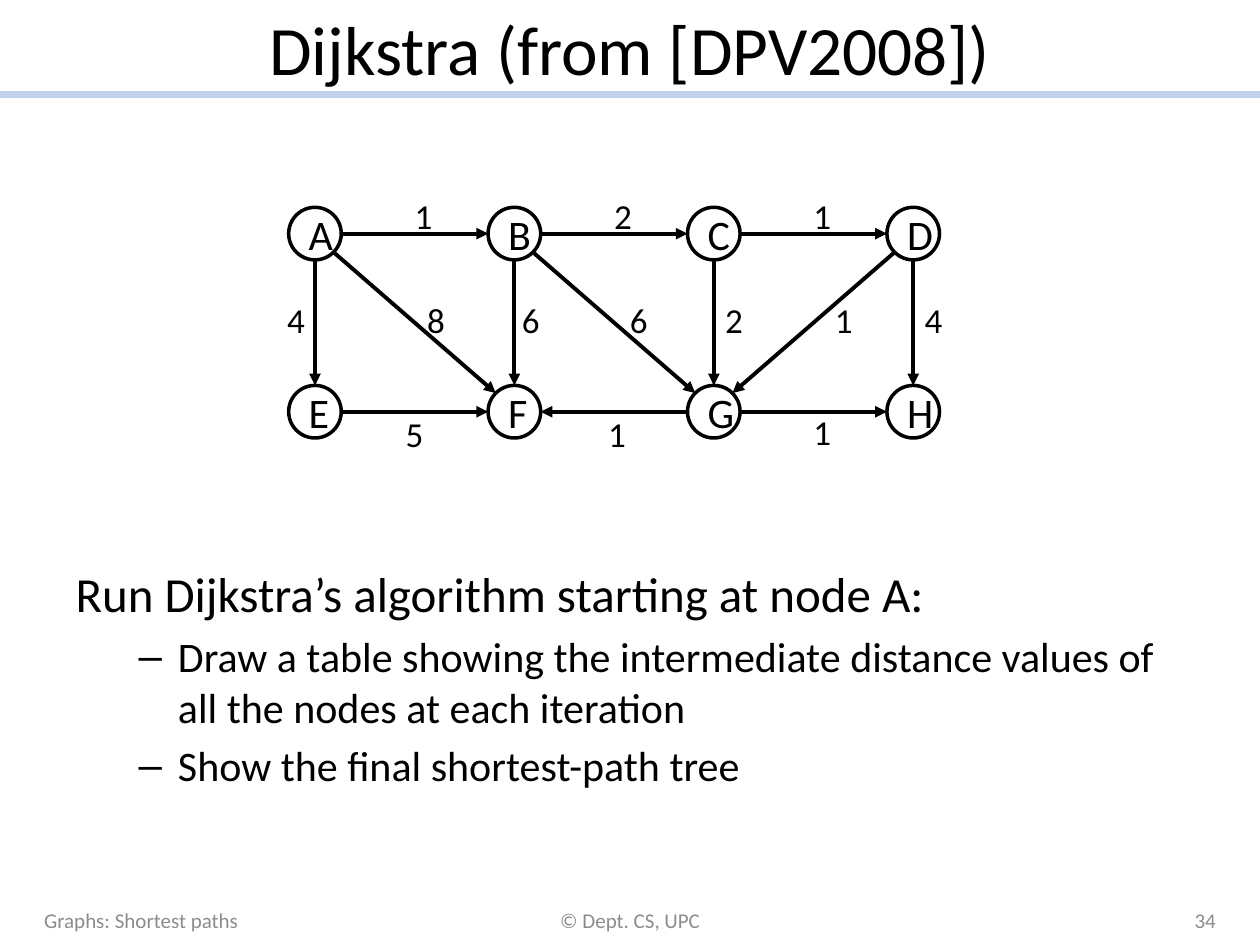
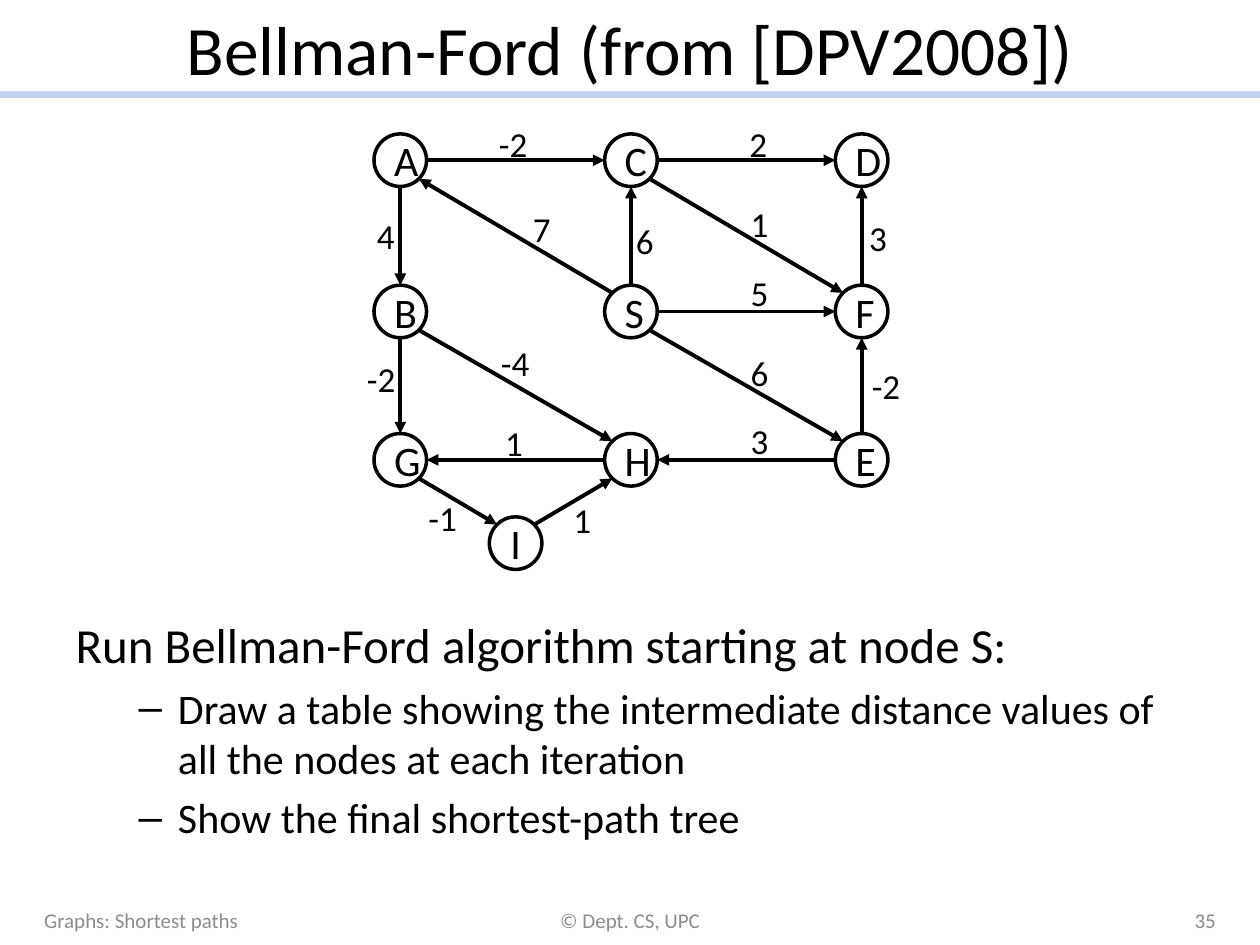
import math

import lxml.etree
import pptx
import pptx.dml.color
import pptx.enum.shapes
import pptx.enum.text
import pptx.oxml.ns
import pptx.util

Cm = pptx.util.Cm
Pt = pptx.util.Pt
ALIGN = pptx.enum.text.PP_ALIGN
MIDDLE = pptx.enum.text.MSO_ANCHOR.MIDDLE

FONT = "Calibri"
BLACK, GREY, BAND = "000000", "8C8C8C", "C2D1ED"
SLIDE_WIDTH, SLIDE_HEIGHT = 25.4, 19.05
TITLE_BOX = (1.27, 0, 22.86, 1.91)
BAND_Y = 1.91
NODE_SIZE = 1.06
LABEL_HEIGHT = 1.12

TASKS = [
    "Draw a table showing the intermediate distance values of all the nodes at each iteration",
    "Show the final shortest-path tree",
]

# Footer boxes: text, left, width, alignment
FOOTER_LEFT = ("Graphs: Shortest paths", 0.64, 5.92, ALIGN.LEFT)
FOOTER_CENTRE = ("© Dept. CS, UPC", 8.68, 8.05, ALIGN.CENTER)
NUMBER_BOX = (18.84, 5.92, ALIGN.RIGHT)

# Nodes: name -> (column, row) in the grid
# Edges: start, end, weight, offset of the weight from the middle of the edge in cm
EXERCISES = [
    {
        "title": "Dijkstra (from [DPV2008])",
        "number": "34",
        "prompt": "Run Dijkstra’s algorithm starting at node A:",
        "body_box": (1.27, 11.23, 22.86, 6.15),
        "left": 6.35,
        "column_gap": 4.02,
        "row_centres": [4.71, 8.3],
        "nodes": {
            "A": (0, 0), "B": (1, 0), "C": (2, 0), "D": (3, 0),
            "E": (0, 1), "F": (1, 1), "G": (2, 1), "H": (3, 1),
        },
        "edges": [
            ("A", "B", "1", (0.18, -0.36)),
            ("B", "C", "2", (0.18, -0.36)),
            ("C", "D", "1", (0.18, -0.36)),
            ("E", "F", "5", (0, 0.46)),
            ("G", "F", "1", (0.06, 0.46)),
            ("G", "H", "1", (0.18, 0.41)),
            ("D", "H", "4", (0.41, -0.06)),
            ("D", "G", "1", (0.61, -0.06)),
            ("B", "G", "6", (0.5, -0.06)),
            ("A", "F", "8", (0.43, -0.06)),
            ("A", "E", "4", (-0.38, -0.06)),
            ("B", "F", "6", (0.33, -0.06)),
            ("C", "G", "2", (0.41, -0.06)),
        ],
    },
    {
        "title": "Bellman-Ford (from [DPV2008])",
        "number": "35",
        "prompt": "Run Bellman-Ford algorithm starting at node S:",
        "body_box": (1.27, 12.27, 22.86, 5.08),
        "left": 8.07,
        "column_gap": 4.65,
        "row_centres": [3.23, 6.28, 9.27, 10.95],
        "nodes": {
            "A": (0, 0), "C": (1, 0), "D": (2, 0),
            "B": (0, 1), "S": (1, 1), "F": (2, 1),
            "G": (0, 2), "H": (1, 2), "E": (2, 2),
            "I": (0.5, 3),
        },
        "edges": [
            ("A", "C", "-2", (-0.04, -0.33)),
            ("C", "D", "2", (0.24, -0.33)),
            ("S", "A", "7", (0.53, -0.13)),
            ("S", "C", "6", (0.28, 0.1)),
            ("C", "F", "1", (0.27, -0.23)),
            ("F", "D", "3", (0.33, 0.05)),
            ("E", "F", "-2", (0.5, 0)),
            ("S", "F", "5", (0.27, -0.38)),
            ("S", "E", "6", (0.27, -0.25)),
            ("B", "G", "-2", (-0.38, -0.13)),
            ("A", "B", "4", (-0.29, 0)),
            ("E", "H", "3", (0.27, -0.38)),
            ("H", "G", "1", (-0.03, -0.33)),
            ("G", "I", "-1", (-0.3, 0.33)),
            ("I", "H", "1", (0.18, 0.38)),
            ("B", "H", "-4", (0, -0.46)),
        ],
    },
]

# Connection site of an ellipse for each direction (right, down)
ELLIPSE_SITES = {
    (0, -1): 0, (-1, -1): 1, (-1, 0): 2, (-1, 1): 3,
    (0, 1): 4, (1, 1): 5, (1, 0): 6, (1, -1): 7,
}


def rgb(colour):
    return pptx.dml.color.RGBColor.from_string(colour)


def add_xml(parent, tag, **attributes):
    return lxml.etree.SubElement(parent, pptx.oxml.ns.qn(tag), attributes)


def add_run(paragraph, text, size, colour=BLACK):
    run = paragraph.add_run()
    run.text = text
    run.font.name = FONT
    run.font.size = Pt(size)
    run.font.color.rgb = rgb(colour)


def place(shape, box):
    shape.left, shape.top, shape.width, shape.height = [Cm(length) for length in box]


def add_line(slide, start, end, colour, width):
    straight = pptx.enum.shapes.MSO_CONNECTOR.STRAIGHT
    line = slide.shapes.add_connector(straight, *[Cm(length) for length in (*start, *end)])
    line.line.color.rgb = rgb(colour)
    line.line.width = Pt(width)
    add_xml(line._element.spPr, "a:effectLst")
    return line


def add_text_box(slide, box, text, size, colour=BLACK, align=ALIGN.LEFT, wrap=True):
    text_box = slide.shapes.add_textbox(*[Cm(length) for length in box])
    frame = text_box.text_frame
    frame.word_wrap = wrap
    paragraph = frame.paragraphs[0]
    paragraph.alignment = align
    add_run(paragraph, text, size, colour)
    return text_box


def add_frame(slide, title, number):
    """Fill in the title, the band below it and the footer."""
    place(slide.shapes.title, TITLE_BOX)
    frame = slide.shapes.title.text_frame
    frame.auto_size = pptx.enum.text.MSO_AUTO_SIZE.NONE
    frame.vertical_anchor = MIDDLE
    frame.paragraphs[0].alignment = ALIGN.CENTER
    add_run(frame.paragraphs[0], title, 39.6)
    add_line(slide, (0, BAND_Y), (SLIDE_WIDTH, BAND_Y), BAND, 4)
    for text, left, width, align in (FOOTER_LEFT, FOOTER_CENTRE, (number, *NUMBER_BOX)):
        footer = add_text_box(slide, (left, 18.03, width, 1.02), text, 12, GREY, align)
        footer.text_frame.vertical_anchor = MIDDLE


def add_assignment(slide, prompt, box):
    body = slide.placeholders[1]
    place(body, box)
    frame = body.text_frame
    frame.auto_size = pptx.enum.text.MSO_AUTO_SIZE.NONE
    heading = frame.paragraphs[0]
    add_run(heading, prompt, 28)
    properties = heading._p.get_or_add_pPr()
    properties.set("marL", "0")
    properties.set("indent", "0")
    add_xml(properties, "a:buNone")
    for task in TASKS:
        paragraph = frame.add_paragraph()
        paragraph.level = 1
        add_run(paragraph, task, 24)


def add_node(slide, name, centre):
    x, y = centre
    radius = NODE_SIZE / 2
    box = (x - radius, y - radius, NODE_SIZE, NODE_SIZE)
    node = slide.shapes.add_shape(
        pptx.enum.shapes.MSO_SHAPE.OVAL, *[Cm(length) for length in box])
    node.shadow.inherit = False
    node.fill.background()
    node.line.color.rgb = rgb(BLACK)
    node.line.width = Pt(2)
    node.text_frame.vertical_anchor = MIDDLE
    paragraph = node.text_frame.paragraphs[0]
    paragraph.alignment = ALIGN.CENTER
    add_run(paragraph, name, 24)
    return node


def sign(number):
    return (number > 0) - (number < 0)


def rim_point(centre, direction):
    """Point of a node's outline in one of the eight compass directions."""
    reach = NODE_SIZE / 2 / math.hypot(*direction)
    return tuple(middle + reach * step for middle, step in zip(centre, direction))


def add_edge(slide, start_node, end_node, start, end):
    forward = tuple(sign(b - a) for a, b in zip(start, end))
    backward = tuple(-step for step in forward)
    arrow = add_line(slide, rim_point(start, forward), rim_point(end, backward), BLACK, 2.25)
    add_xml(arrow.line._get_or_add_ln(), "a:tailEnd", type="triangle")
    joints = arrow._element.nvCxnSpPr.cNvCxnSpPr
    for tag, node, direction in (("a:stCxn", start_node, forward),
                                 ("a:endCxn", end_node, backward)):
        add_xml(joints, tag, id=str(node.shape_id), idx=str(ELLIPSE_SITES[direction]))


def add_weight(slide, weight, start, end, offset):
    x, y = [(a + b) / 2 + shift for a, b, shift in zip(start, end, offset)]
    width = 0.86 if len(weight) == 1 else 1.09
    box = (x - width / 2, y - LABEL_HEIGHT / 2, width, LABEL_HEIGHT)
    add_text_box(slide, box, weight, 20, wrap=False)


def add_graph(slide, exercise):
    centres = {
        name: (exercise["left"] + column * exercise["column_gap"], exercise["row_centres"][row])
        for name, (column, row) in exercise["nodes"].items()
    }
    nodes = {name: add_node(slide, name, centre) for name, centre in centres.items()}
    for start, end, weight, offset in exercise["edges"]:
        add_edge(slide, nodes[start], nodes[end], centres[start], centres[end])
        add_weight(slide, weight, centres[start], centres[end], offset)


def main():
    presentation = pptx.Presentation()
    presentation.slide_width = Cm(SLIDE_WIDTH)
    presentation.slide_height = Cm(SLIDE_HEIGHT)
    for exercise in EXERCISES:
        slide = presentation.slides.add_slide(presentation.slide_layouts[1])
        add_frame(slide, exercise["title"], exercise["number"])
        add_assignment(slide, exercise["prompt"], exercise["body_box"])
        add_graph(slide, exercise)
    presentation.save("out.pptx")


if __name__ == "__main__":
    main()
